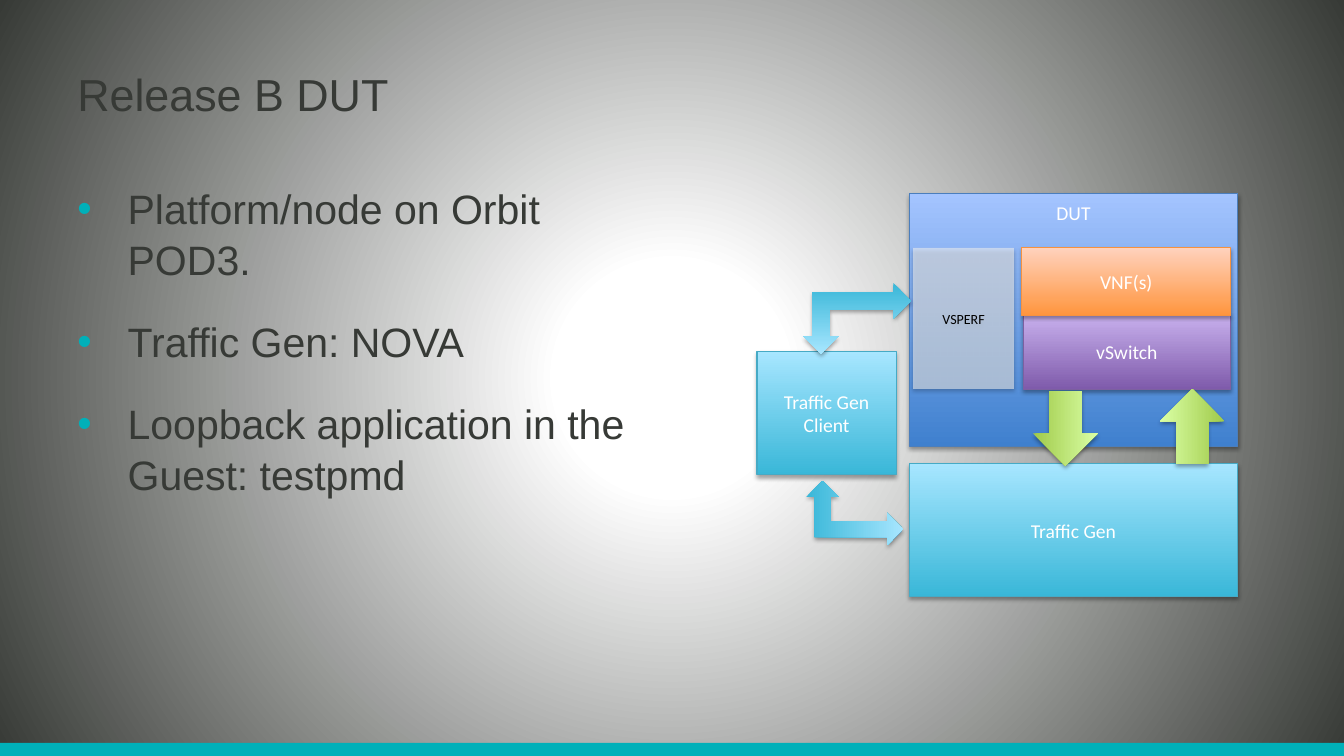
from pptx import Presentation
from pptx.dml.color import RGBColor
from pptx.enum.shapes import MSO_SHAPE
from pptx.enum.text import MSO_ANCHOR, MSO_AUTO_SIZE, PP_ALIGN
from pptx.oxml import parse_xml
from pptx.oxml.ns import qn
from pptx.util import Pt

NAMESPACE = 'xmlns:a="http://schemas.openxmlformats.org/drawingml/2006/main"'
INK, TEAL, WHITE, BLACK = "373A36", "00B0B9", "FFFFFF", "000000"
CYAN, BLUE = ("39B7D8", "A7E6FF"), ("3F80CE", "A4C4FF")
PURPLE, ORANGE = ("7F5BAB", "C8B0ED"), ("FF953E", "FFD2BD")
GREEN = ("A0CA4A", "DAFFA5")


def colour(value):
    """Turn a hex string into a colour."""
    return RGBColor.from_string(value)


class SlideBuilder:
    """Holds the style and the current slide."""

    def __init__(self, deck):
        """Add a slide with a title and a body."""
        self.page = deck.slides.add_slide(deck.slide_layouts[1])
        self.heading_font, self.label_font = "Arial", "Calibri"

    def background(self, centre, edge):
        """Fill the slide with a radial gradient."""
        fill = self.page.background.fill
        fill.gradient()
        old = next(self.page.element.iter(qn("a:gradFill")))
        new = parse_xml(
            f'<a:gradFill {NAMESPACE} rotWithShape="1"><a:gsLst>'
            f'<a:gs pos="15000"><a:srgbClr val="{centre}"/></a:gs>'
            f'<a:gs pos="100000"><a:srgbClr val="{edge}">'
            '<a:alpha val="5000"/></a:srgbClr></a:gs></a:gsLst>'
            '<a:path path="circle"><a:fillToRect l="50000" t="50000" '
            'r="50000" b="50000"/></a:path></a:gradFill>')
        old.getparent().replace(old, new)

    def place(self, shape, left, top, width, height):
        """Move and size a placeholder."""
        shape.left, shape.top = Pt(left), Pt(top)
        shape.width, shape.height = Pt(width), Pt(height)
        shape.text_frame.auto_size = MSO_AUTO_SIZE.NONE
        shape.text_frame.word_wrap = True

    def style(self, para, name, size, ink, align):
        """Format the runs of a paragraph."""
        para.alignment = align
        for span in para.runs:
            span.font.name, span.font.size = name, Pt(size)
            span.font.color.rgb = colour(ink)

    def title(self, text, *bounds):
        """Fill the title placeholder."""
        box = self.page.shapes.title
        self.place(box, *bounds)
        box.text_frame.text = text
        box.text_frame.vertical_anchor = MSO_ANCHOR.MIDDLE
        self.style(box.text_frame.paragraphs[0], self.heading_font, 32, INK, PP_ALIGN.LEFT)

    def bullets(self, items, *bounds):
        """Fill the body placeholder with a bulleted list."""
        box = self.page.placeholders[1]
        self.place(box, *bounds)
        box.text_frame.text = "\n".join(items)
        for para in box.text_frame.paragraphs:
            properties = para._p.get_or_add_pPr()
            properties.set("marL", str(Pt(36)))
            properties.set("indent", str(Pt(-36)))
            for element in (f'<a:buClr {NAMESPACE}><a:srgbClr val="{TEAL}"/></a:buClr>',
                            f'<a:buFont {NAMESPACE} typeface="{self.heading_font}"/>',
                            f'<a:buChar {NAMESPACE} char="•"/>'):
                properties.append(parse_xml(element))
            para.line_spacing = 1.04
            para.space_before, para.space_after = Pt(0), Pt(22)
            self.style(para, self.heading_font, 29.3, INK, PP_ALIGN.LEFT)

    def shape(self, kind, bounds, fill, line=None, turn=0):
        """Add a shape with a plain or two-colour fill."""
        shape = self.page.shapes.add_shape(kind, *(Pt(value) for value in bounds))
        shape.rotation = turn
        shape.shadow.inherit = False
        if isinstance(fill, str):
            shape.fill.solid()
            shape.fill.fore_color.rgb = colour(fill)
        else:
            shape.fill.gradient()
            shape.fill.gradient_angle = 90
            for stop, position, value in zip(shape.fill.gradient_stops, (0, 1), fill):
                stop.position = position
                stop.color.rgb = colour(value)
        if line:
            shape.line.color.rgb = colour(line)
            shape.line.width = Pt(0.75)
        else:
            shape.line.fill.background()
        return shape

    def shadow(self, shape):
        """Give a shape a soft shadow below."""
        effects = shape._element.spPr.find(qn("a:effectLst"))
        effects.append(parse_xml(
            f'<a:outerShdw {NAMESPACE} blurRad="{Pt(3.1)}" dist="{Pt(1.8)}" '
            f'dir="5400000" rotWithShape="0"><a:srgbClr val="{BLACK}">'
            '<a:alpha val="35000"/></a:srgbClr></a:outerShdw>'))

    def block(self, text, bounds, fill, line=None, size=14, ink=WHITE,
              anchor=MSO_ANCHOR.MIDDLE):
        """Add a labelled block of the diagram."""
        box = self.shape(MSO_SHAPE.RECTANGLE, bounds, fill, line)
        self.shadow(box)
        frame = box.text_frame
        frame.text, frame.word_wrap = text, True
        frame.vertical_anchor, frame.margin_top = anchor, Pt(5)
        frame.margin_bottom = Pt(5)
        self.style(frame.paragraphs[0], self.label_font, size, ink, PP_ALIGN.CENTER)
        return box

    def arrow(self, kind, bounds, fill, turn):
        """Add a block arrow."""
        self.shadow(self.shape(kind, bounds, fill, turn=turn))

    def fade(self, box, percent):
        """Set the opacity of a plain fill."""
        tint = box._element.spPr.find(qn("a:solidFill"))[0]
        tint.append(parse_xml(f'<a:alpha {NAMESPACE} val="{percent * 1000}"/>'))


def main():
    """Build and save the slide."""
    deck = Presentation()
    deck.slide_width, deck.slide_height = Pt(960), Pt(540)
    slide = SlideBuilder(deck)
    slide.background(WHITE, INK)
    slide.shape(MSO_SHAPE.RECTANGLE, (0, 530.6, 960, 9.4), TEAL)
    slide.title("Release B DUT", 48, 21.6, 864, 90)
    slide.bullets(["Platform/node on Orbit POD3.", "Traffic Gen: NOVA",
                   "Loopback application in the Guest: testpmd"], 48, 126, 406.8, 356.4)

    slide.block("Traffic Gen", (649.4, 331.2, 234.8, 95), CYAN, "46AAC5")
    slide.block("DUT", (649.4, 138.2, 234.8, 180.8), BLUE, "4B7EBC", anchor=MSO_ANCHOR.TOP)
    slide.block("vSwitch", (730.8, 224.7, 148.3, 53.3), PURPLE, "7D60A0")
    slide.block("VNF(s)", (730, 177.1, 149, 48.2), ORANGE, "F69240")
    slide.block("Traffic Gen Client", (540.7, 251.3, 99.4, 87.8), CYAN, "46AAC5")
    tester = slide.block("VSPERF", (652.3, 177.1, 72, 100.8), "F2F2F2", size=10, ink=BLACK)
    slide.fade(tester, 57)

    slide.arrow(MSO_SHAPE.RIGHT_ARROW, (825.1, 281.5, 53.3, 46.1), GREEN, 270)
    slide.arrow(MSO_SHAPE.RIGHT_ARROW, (734.4, 283, 53.3, 46.1), GREEN, 90)
    slide.arrow(MSO_SHAPE.LEFT_UP_ARROW, (573.8, 202.3, 77, 50.4), CYAN, 180)
    slide.arrow(MSO_SHAPE.LEFT_UP_ARROW, (587.5, 331.9, 46.1, 69.1), CYAN, 90)
    deck.save("out.pptx")


if __name__ == "__main__":
    main()
